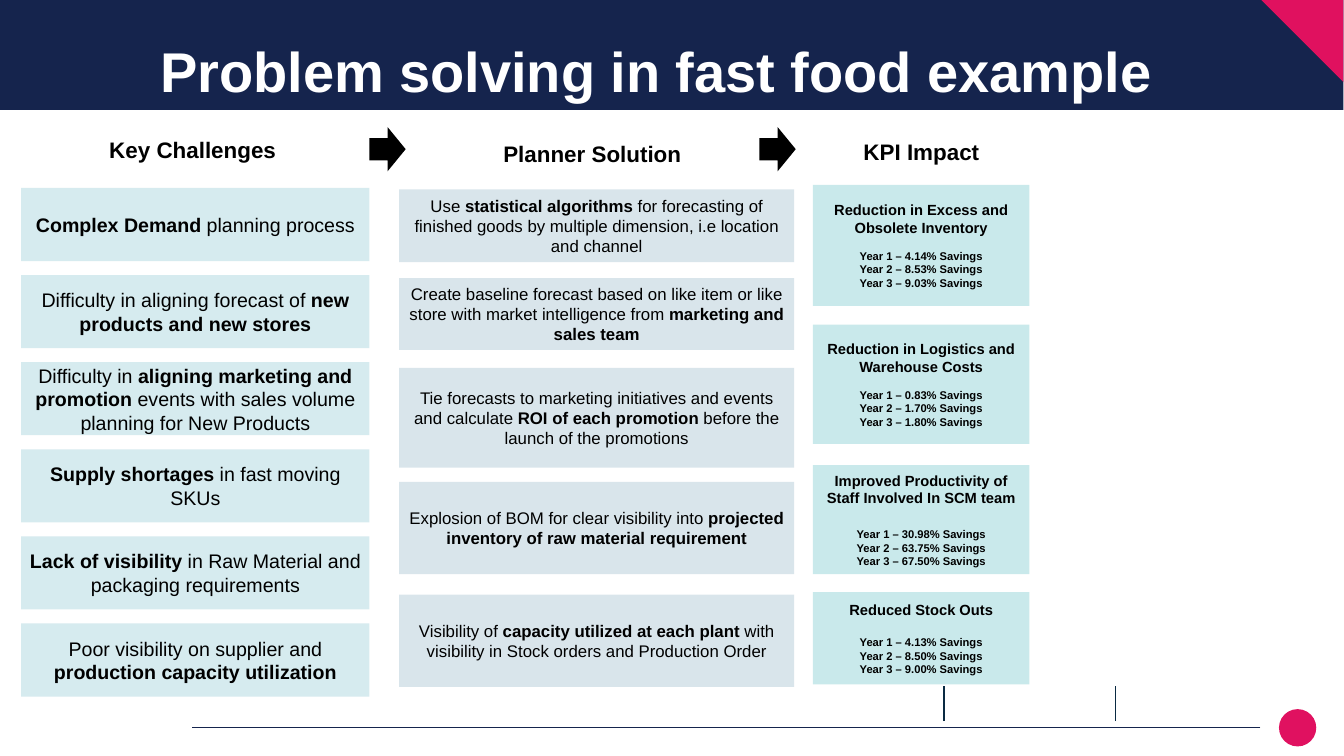
from lxml import etree
from pptx import Presentation
from pptx.dml.color import RGBColor
from pptx.enum.shapes import MSO_CONNECTOR, MSO_SHAPE
from pptx.enum.text import MSO_ANCHOR, PP_ALIGN
from pptx.oxml.ns import qn
from pptx.util import Inches, Pt

RECT, OVAL, ARROW = MSO_SHAPE.RECTANGLE, MSO_SHAPE.OVAL, MSO_SHAPE.RIGHT_ARROW
STRAIGHT = MSO_CONNECTOR.STRAIGHT
TOP, MIDDLE = MSO_ANCHOR.TOP, MSO_ANCHOR.MIDDLE
CENTER = PP_ALIGN.CENTER

NAVY, PINK, BLACK, WHITE = "15244D", "E0115F", "000000", "FFFFFF"
LINE_GAP = 1.15  # height of a text line relative to its font size

# Text between ** marks is bold
CHALLENGES = [
    "**Complex Demand** planning process",
    "Difficulty in aligning forecast of **new products and new stores**",
    "Difficulty in **aligning marketing and promotion** events with sales volume "
    "planning for New Products",
    "**Supply shortages** in fast moving SKUs",
    "**Lack of visibility** in Raw Material and packaging requirements",
    "Poor visibility on supplier and **production capacity utilization**",
]
# (top, height, text)
SOLUTIONS = [
    (3.76, 1.44, "Use **statistical algorithms** for forecasting of finished goods by "
                 "multiple dimension, i.e location and channel"),
    (5.52, 1.42, "Create baseline forecast based on like item or like store with market "
                 "intelligence from **marketing and sales team**"),
    (7.3, 1.98, "Tie forecasts to marketing initiatives and events and calculate "
                "**ROI of each promotion** before the launch of the promotions"),
    (9.56, 1.83, "Explosion of BOM for clear visibility into **projected inventory of raw "
                 "material requirement**"),
    (11.8, 1.83, "Visibility of **capacity utilized at each plant** with visibility in "
                 "Stock orders and Production Order"),
]
# (top, height, heading, gap in points, savings per year)
KPIS = [
    (3.67, 2.4, "Reduction in Excess and Obsolete Inventory", 16, ("4.14", "8.53", "9.03")),
    (6.44, 2.37, "Reduction in Logistics and Warehouse Costs", 16, ("0.83", "1.70", "1.80")),
    (9.23, 2.16, "Improved Productivity of Staff Involved In SCM team", 26,
     ("30.98", "63.75", "67.50")),
    (11.75, 1.83, "Reduced Stock Outs", 21, ("4.13", "8.50", "9.00")),
]


def color(hex_string):
    return RGBColor.from_string(hex_string)


def paint(shape, fill, opacity=100):
    shape.shadow.inherit = False
    shape.fill.solid()
    shape.fill.fore_color.rgb = color(fill)
    shape.line.fill.background()
    if opacity < 100:
        srgb = shape._element.spPr.find(".//" + qn("a:srgbClr"))
        etree.SubElement(srgb, qn("a:alpha"), val=str(opacity * 1000))


def add_block(slide, kind, box, fill, opacity=100):
    shape = slide.shapes.add_shape(kind, *map(Inches, box))
    paint(shape, fill, opacity)
    return shape


def add_line(slide, x1, y1, x2, y2, stroke, width):
    line = slide.shapes.add_connector(STRAIGHT, *map(Inches, (x1, y1, x2, y2)))
    line.line.color.rgb = color(stroke)
    line.line.width = Pt(width)
    etree.SubElement(line._element.spPr, qn("a:effectLst"))


def style(paragraph, size, bold=None, ink=BLACK):
    paragraph.alignment = CENTER
    font = paragraph.font
    font.name, font.size, font.bold = "Arial", Pt(size), bold
    font.color.rgb = color(ink)


def add_card(slide, box, fill, opacity, text, size):
    card = add_block(slide, RECT, box, fill, opacity)
    frame = card.text_frame
    frame.word_wrap, frame.vertical_anchor = True, MIDDLE
    paragraph = frame.paragraphs[0]
    style(paragraph, size)
    for i, part in enumerate(text.split("**")):
        if part:
            run = paragraph.add_run()
            run.text = part
            if i % 2:
                run.font.bold = True


def add_heading(slide, left, top, text):
    heading = slide.shapes.add_textbox(*map(Inches, (left, top, 6.63, 0.64)))
    heading.text_frame.word_wrap = True
    heading.text_frame.text = text
    style(heading.text_frame.paragraphs[0], 32, True)


def add_kpi(slide, box, heading, gap, savings):
    card = add_block(slide, RECT, box, "0099A1", 21)
    frame = card.text_frame
    frame.word_wrap, frame.vertical_anchor = True, MIDDLE
    frame.margin_left = frame.margin_right = Inches(0.21)
    frame.margin_top = frame.margin_bottom = Inches(0.13)
    frame.text = heading
    style(frame.paragraphs[0], 21, True)
    frame.paragraphs[0].space_after = Pt(round(gap * LINE_GAP, 1))
    for year, saving in enumerate(savings, 1):
        paragraph = frame.add_paragraph()
        paragraph.text = f"Year {year} – {saving}% Savings"
        style(paragraph, 16, True)


def add_header(slide):
    add_block(slide, RECT, (-0.03, -0.15, 26.69, 2.33), NAVY)
    # Corner triangle
    right, size = 26.66, 1.63
    outline = slide.shapes.build_freeform(Inches(right - size), 0)
    outline.add_line_segments([(Inches(right), 0), (Inches(right), Inches(size))])
    paint(outline.convert_to_shape(), PINK)
    # Title, brought in front of the band
    title = slide.shapes.title
    title.left, title.top, title.width, title.height = map(Inches, (2.49, 0.68, 21.08, 1.45))
    title.text_frame.text = "Problem solving in fast food example"
    title.text_frame.word_wrap, title.text_frame.vertical_anchor = True, TOP
    style(title.text_frame.paragraphs[0], 80, True, WHITE)
    slide.shapes._spTree.append(title._element)


def add_footer(slide):
    add_block(slide, OVAL, (25.38, 14.07, 0.74, 0.74), "E01160")
    add_line(slide, 25.01, 14.44, 3.81, 14.44, NAVY, 1.5)
    for x in (18.73, 22.13):
        add_line(slide, x, 14.31, x, 13.61, "0A2A42", 2)


def add_challenges(slide, left, top, width):
    add_heading(slide, 0.51, 2.65, "Key Challenges")
    height, pitch = 1.45, 1.728
    for row, text in enumerate(CHALLENGES):
        add_card(slide, (left, top + row * pitch, width, height), "00839E", 16, text, 28)


def add_solutions(slide, left, width):
    add_heading(slide, 8.44, 2.73, "Planner Solution")
    for top, height, text in SOLUTIONS:
        add_card(slide, (left, top, width, height), "00527B", 15, text, 24)


def add_kpis(slide, left, width):
    add_heading(slide, 14.97, 2.69, "KPI Impact")
    for top, height, heading, gap, savings in KPIS:
        add_kpi(slide, (left, top, width, height), heading, gap, savings)


def main():
    deck = Presentation()
    deck.slide_width, deck.slide_height = Inches(26.67), Inches(15)
    slide = deck.slides.add_slide(deck.slide_layouts[5])
    add_header(slide)
    add_footer(slide)
    add_challenges(slide, 0.42, 3.73, 6.91)
    add_solutions(slide, 7.92, 7.84)
    add_kpis(slide, 16.13, 4.3)
    # Arrows between the column headings
    for left in (7.33, 15.07):
        add_block(slide, ARROW, (left, 2.52, 0.72, 0.88), BLACK)
    deck.save("out.pptx")


if __name__ == "__main__":
    main()
